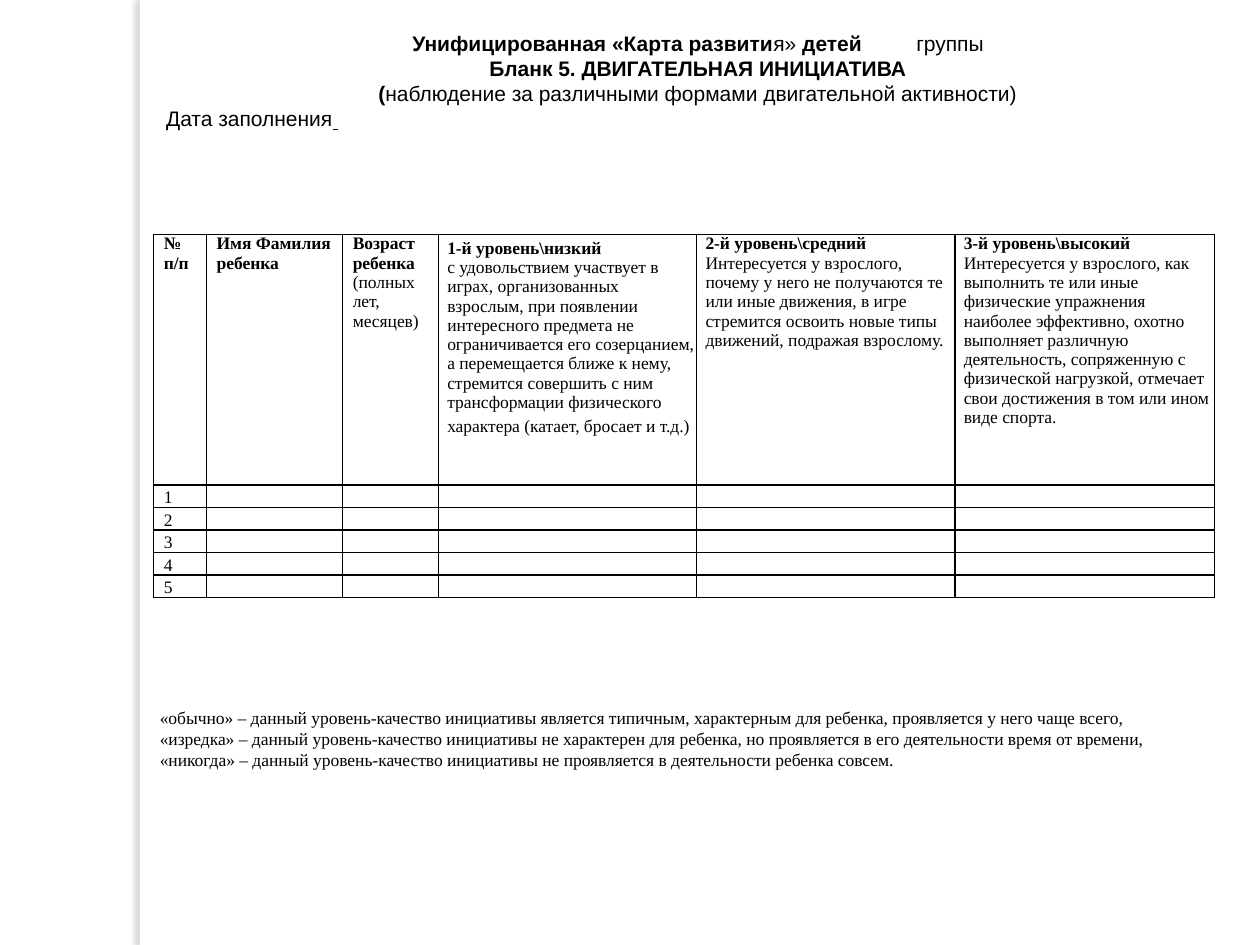
import pptx
import pptx.dml.color
import pptx.enum.shapes
import pptx.enum.text
import pptx.oxml
import pptx.oxml.ns
import pptx.util
from lxml import etree

Inches = pptx.util.Inches
Pt = pptx.util.Pt
PP_ALIGN = pptx.enum.text.PP_ALIGN

BLACK = pptx.dml.color.RGBColor(0x00, 0x00, 0x00)
WHITE = pptx.dml.color.RGBColor(0xFF, 0xFF, 0xFF)
SHADOW = pptx.dml.color.RGBColor(0x73, 0x6F, 0x63)

SERIF = "Times New Roman"
SANS = "Arial"

COLUMN_WIDTHS = [0.42, 1.08, 0.76, 2.05, 2.05, 2.06]
HEADER_HEIGHT, ROW_HEIGHT = 1.99, 0.16
CHILD_COUNT = 5

# Each cell is a list of paragraphs: (line spacing in points or None, runs).
# Each run is (text, style letters): b = bold, u = underlined.
HEADERS = [
    [(None, [("№ п/п", "b")])],
    [(None, [("Имя Фамилия ребенка", "b")])],
    [(None, [("Возраст ребенка ", "b"), ("(полных лет, месяцев)", "")])],
    [
        (13.5, [("1-й уровень\\низкий", "b")]),
        (None, [("с удовольствием участвует в играх, организованных взрослым, "
                 "при появлении интересного предмета не ограничивается его "
                 "созерцанием, а перемещается ближе к нему, стремится совершить "
                 "с ним трансформации физического", "")]),
        (13.5, [("характера (катает, бросает и т.д.)", "")]),
    ],
    [(None, [("2-й уровень\\средний ", "b"),
             ("Интересуется у взрослого, почему у него не получаются те или иные "
              "движения, в игре стремится освоить новые типы движений, подражая "
              "взрослому.", "")])],
    [(None, [("3-й уровень\\высокий ", "b"),
             ("Интересуется у взрослого, как выполнить те или иные физические "
              "упражнения наиболее эффективно, охотно выполняет различную "
              "деятельность, сопряженную с физической нагрузкой, отмечает свои "
              "достижения в том или ином виде спорта.", "")])],
]

TITLE = [
    (PP_ALIGN.CENTER, [("Унифицированная «Карта развити", "b"), ("я» ", ""),
                       ("детей", "b"), ("\t", "bu"), ("группы", "")]),
    (PP_ALIGN.CENTER, [("Бланк 5. ДВИГАТЕЛЬНАЯ ИНИЦИАТИВА", "b")]),
    (PP_ALIGN.CENTER, [("(", "b"),
                       ("наблюдение за различными формами двигательной активности)", "")]),
    (PP_ALIGN.LEFT, [("Дата заполнения", ""), (" \t", "u")]),
]

LEGEND = [
    "«обычно» – данный уровень-качество инициативы является типичным, "
    "характерным для ребенка, проявляется у него чаще всего,",
    "«изредка» – данный уровень-качество инициативы не характерен для ребенка, "
    "но проявляется в его деятельности время от времени,",
    "«никогда» – данный уровень-качество инициативы не проявляется в "
    "деятельности ребенка совсем.",
]


def add_runs(paragraph, runs, font_name, size):
    for text, style in runs:
        run = paragraph.add_run()
        run.text = text
        run.font.name = font_name
        run.font.size = Pt(size)
        run.font.bold = "b" in style
        run.font.underline = "u" in style
        run.font.color.rgb = BLACK


def paragraph_at(frame, index):
    return frame.paragraphs[0] if index == 0 else frame.add_paragraph()


def set_indent(paragraph, inches):
    paragraph._p.get_or_add_pPr().set("marL", str(Inches(inches)))


def add_tab_stop(paragraph, inches):
    tabs = etree.SubElement(paragraph._p.get_or_add_pPr(), pptx.oxml.ns.qn("a:tabLst"))
    etree.SubElement(tabs, pptx.oxml.ns.qn("a:tab"), pos=str(Inches(inches)), algn="l")


def add_side_strip(slide):
    """White strip at the left margin that casts a soft shadow to the left."""
    strip = slide.shapes.add_shape(pptx.enum.shapes.MSO_SHAPE.RECTANGLE,
                                   Inches(1.11), 0, Inches(0.08), Inches(7.5))
    strip.fill.solid()
    strip.fill.fore_color.rgb = WHITE
    strip.line.fill.background()
    strip.shadow.inherit = False
    effects = strip._element.spPr.find(pptx.oxml.ns.qn("a:effectLst"))
    effects.append(pptx.oxml.parse_xml(
        f'<a:outerShdw {pptx.oxml.ns.nsdecls("a")} blurRad="{Pt(3)}" dist="{Pt(3)}" '
        f'dir="10800000" algn="tl" rotWithShape="0"><a:srgbClr val="{SHADOW}">'
        '<a:alpha val="25000"/></a:srgbClr></a:outerShdw>'))


def add_borders(cell):
    properties = cell._tc.get_or_add_tcPr()
    for position, side in enumerate(("lnL", "lnR", "lnT", "lnB")):
        properties.insert(position, pptx.oxml.parse_xml(
            f'<a:{side} {pptx.oxml.ns.nsdecls("a")} w="{Pt(1)}"><a:solidFill>'
            f'<a:srgbClr val="{BLACK}"/></a:solidFill></a:{side}>'))


def fill_cell(cell, paragraphs, indent):
    cell.margin_left = cell.margin_right = cell.margin_top = cell.margin_bottom = 0
    cell.fill.background()
    add_borders(cell)
    for index, (spacing, runs) in enumerate(paragraphs):
        paragraph = paragraph_at(cell.text_frame, index)
        set_indent(paragraph, indent)
        if spacing:
            paragraph.line_spacing = Pt(spacing)
        add_runs(paragraph, runs, SERIF, 10)
        if not runs:
            etree.SubElement(paragraph._p, pptx.oxml.ns.qn("a:endParaRPr"), sz="1000")


def add_level_table(slide):
    height = HEADER_HEIGHT + CHILD_COUNT * ROW_HEIGHT
    table = slide.shapes.add_table(
        CHILD_COUNT + 1, len(COLUMN_WIDTHS), Inches(1.22), Inches(1.86),
        Inches(sum(COLUMN_WIDTHS)), Inches(height)).table
    table.first_row = table.horz_banding = False
    for column, width in zip(table.columns, COLUMN_WIDTHS):
        column.width = Inches(width)
    for number, row in enumerate(table.rows):
        row.height = Inches(ROW_HEIGHT if number else HEADER_HEIGHT)
        for index, cell in enumerate(row.cells):
            if number == 0:
                content = HEADERS[index]
            else:
                content = [(12.8, [(str(number), "")] if index == 0 else [])]
            fill_cell(cell, content, 0.08 if index < 3 else 0.07)


def add_text_frame(slide, left, top, width, height):
    frame = slide.shapes.add_textbox(Inches(left), Inches(top),
                                     Inches(width), Inches(height)).text_frame
    frame.word_wrap = True
    return frame


def add_title(slide):
    frame = add_text_frame(slide, 1.22, 0.19, 8.64, 1.21)
    for index, (alignment, runs) in enumerate(TITLE):
        paragraph = paragraph_at(frame, index)
        paragraph.alignment = alignment
        add_tab_stop(paragraph, 2.64)
        add_runs(paragraph, runs, SANS, 12)


def add_legend(slide):
    frame = add_text_frame(slide, 1.09, 5.56, 8.5, 0.61)
    for index, line in enumerate(LEGEND):
        paragraph = paragraph_at(frame, index)
        set_indent(paragraph, 0.08)
        add_runs(paragraph, [(line, "")], SERIF, 10)


def main():
    presentation = pptx.Presentation()
    presentation.slide_width = Inches(10)
    presentation.slide_height = Inches(7.5)
    slide = presentation.slides.add_slide(presentation.slide_layouts[6])
    add_side_strip(slide)
    add_level_table(slide)
    add_title(slide)
    add_legend(slide)
    presentation.save("out.pptx")


if __name__ == "__main__":
    main()
